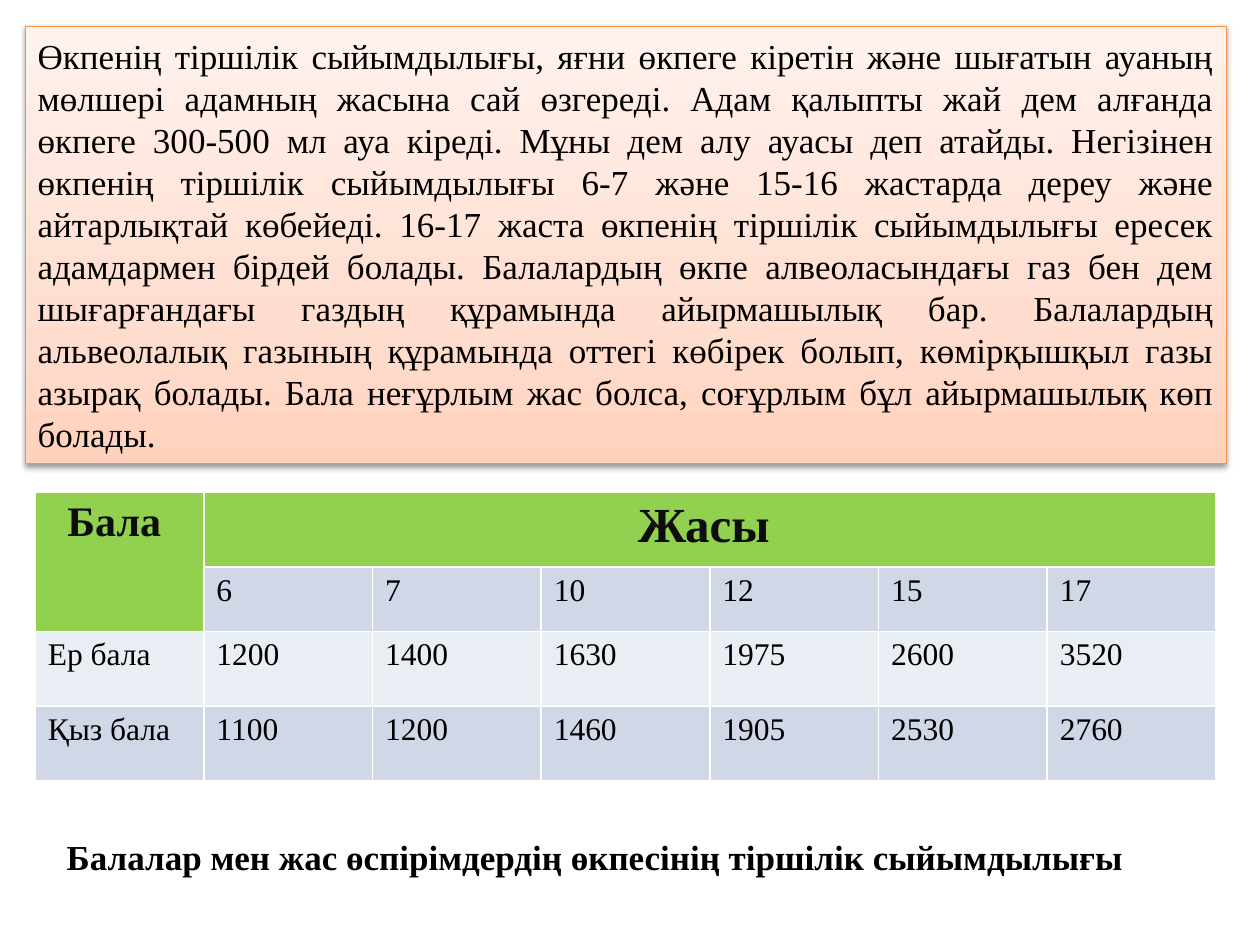
import copy
import lxml.etree
import pptx
import pptx.dml.color
import pptx.enum.shapes
import pptx.enum.text
import pptx.oxml
import pptx.oxml.ns
import pptx.util

Cm = pptx.util.Cm
Pt = pptx.util.Pt
RGB = pptx.dml.color.RGBColor
ALIGN = pptx.enum.text.PP_ALIGN
FIT = pptx.enum.text.MSO_AUTO_SIZE
TOP = pptx.enum.text.MSO_ANCHOR.TOP
qn = pptx.oxml.ns.qn

BLACK = RGB(0x00, 0x00, 0x00)
DARK = RGB(0x0D, 0x0D, 0x0D)
EDGE = RGB(0xF6, 0x92, 0x40)
GREEN = RGB(0x92, 0xD0, 0x50)
BANDS = [RGB(0xD0, 0xD8, 0xE8), RGB(0xE9, 0xED, 0xF4)]
STOPS = [
    (0, RGB(0xFF, 0xD2, 0xBD)),
    (0.35, RGB(0xFF, 0xDE, 0xD0)),
    (1, RGB(0xFF, 0xF2, 0xED)),
]

INTRO = (
    "Өкпенің тіршілік сыйымдылығы, яғни өкпеге кіретін және шығатын ауаның "
    "мөлшері адамның жасына сай өзгереді. Адам қалыпты жай дем алғанда "
    "өкпеге 300-500 мл ауа кіреді. Мұны дем алу ауасы деп атайды. Негізінен "
    "өкпенің тіршілік сыйымдылығы 6-7 және 15-16 жастарда дереу және "
    "айтарлықтай көбейеді. 16-17 жаста өкпенің тіршілік сыйымдылығы ересек "
    "адамдармен бірдей болады. Балалардың өкпе алвеоласындағы газ бен дем "
    "шығарғандағы газдың құрамында айырмашылық бар. Балалардың "
    "альвеолалық газының құрамында оттегі көбірек болып, көмірқышқыл газы "
    "азырақ болады. Бала неғұрлым жас болса, соғұрлым бұл айырмашылық көп "
    "болады. "
)
TITLE = "Балалар мен жас өспірімдердің өкпесінің тіршілік сыйымдылығы"
HEADS = [("Бала ", 24, (0, 0), (1, 0)), ("Жасы ", 28, (0, 1), (0, 6))]
ROWS = [
    ["", "6", "7", "10", "12", "15", "17"],
    ["Ер бала", "1200", "1400", "1630", "1975", "2600", "3520"],
    ["Қыз бала", "1100", "1200", "1460", "1905", "2530", "2760"],
]
HIGHS = [1.5, 1.3, 1.5, 1.5]
WIDE = 3.4

BODY = {"name": "Times New Roman", "size": Pt(20), "bold": False}
CELL = {**BODY, "size": Pt(18)}
BOLD = {**BODY, "bold": True}


def write(frame, text, style, color=BLACK, align=ALIGN.LEFT):
    frame.text = text
    par = frame.paragraphs[0]
    par.alignment = align
    font = par.runs[0].font
    for key, val in style.items():
        setattr(font, key, val)
    font.color.rgb = color


def paint(cell, color):
    cell.fill.solid()
    cell.fill.fore_color.rgb = color


def add_intro(slide):
    box = slide.shapes.add_shape(
        pptx.enum.shapes.MSO_SHAPE.RECTANGLE, Cm(0.51), Cm(0.53), Cm(24.21), Cm(8.81)
    )
    box.fill.gradient()
    box.fill.gradient_angle = 90
    stops = box._element.spPr.find(qn("a:gradFill")).find(qn("a:gsLst"))
    stops.append(copy.deepcopy(stops[-1]))
    for stop, (pos, color) in zip(box.fill.gradient_stops, STOPS):
        stop.position = pos
        stop.color.rgb = color
    box.line.color.rgb = EDGE
    box.line.width = Pt(0.75)
    box.shadow.inherit = False
    glow = lxml.etree.SubElement(
        box._element.spPr.find(qn("a:effectLst")), qn("a:outerShdw"),
        blurRad=str(Pt(3.1)), dist=str(Pt(1.6)), dir="5400000", rotWithShape="0",
    )
    tint = lxml.etree.SubElement(glow, qn("a:srgbClr"), val=str(BLACK))
    lxml.etree.SubElement(tint, qn("a:alpha"), val="38000")
    frame = box.text_frame
    frame.word_wrap = True
    frame.auto_size = FIT.SHAPE_TO_FIT_TEXT
    write(frame, INTRO, BODY, align=ALIGN.JUSTIFY)


def add_ages(slide):
    cols = len(ROWS[0])
    grid = slide.shapes.add_table(
        len(HIGHS), cols, Cm(0.71), Cm(9.93), Cm(WIDE * cols), Cm(sum(HIGHS))
    ).table
    for col in grid.columns:
        col.width = Cm(WIDE)
    for row, high in zip(grid.rows, HIGHS):
        row.height = Cm(high)
    for r, row in enumerate(ROWS):
        for c, text in enumerate(row):
            cell = grid.cell(r + 1, c)
            paint(cell, BANDS[r % 2])
            if text:
                write(cell.text_frame, text, CELL)
    for text, size, start, end in HEADS:
        cell = grid.cell(*start)
        cell.merge(grid.cell(*end))
        paint(cell, GREEN)
        write(cell.text_frame, text, {**BOLD, "size": Pt(size)}, DARK, ALIGN.CENTER)


def add_title(slide):
    title = slide.shapes.title
    place = {"left": 1.09, "top": 16.71, "width": 22.61, "height": 1.12}
    for key, val in place.items():
        setattr(title, key, Cm(val))
    frame = title.text_frame
    frame.word_wrap = True
    frame.auto_size = FIT.SHAPE_TO_FIT_TEXT
    frame.vertical_anchor = TOP
    write(frame, TITLE, BOLD)


def main():
    deck = pptx.Presentation()
    deck.slide_width = Cm(25.4)
    deck.slide_height = Cm(19.05)
    slide = deck.slides.add_slide(deck.slide_layouts[5])
    add_intro(slide)
    add_ages(slide)
    add_title(slide)
    deck.save("out.pptx")


if __name__ == "__main__":
    main()
